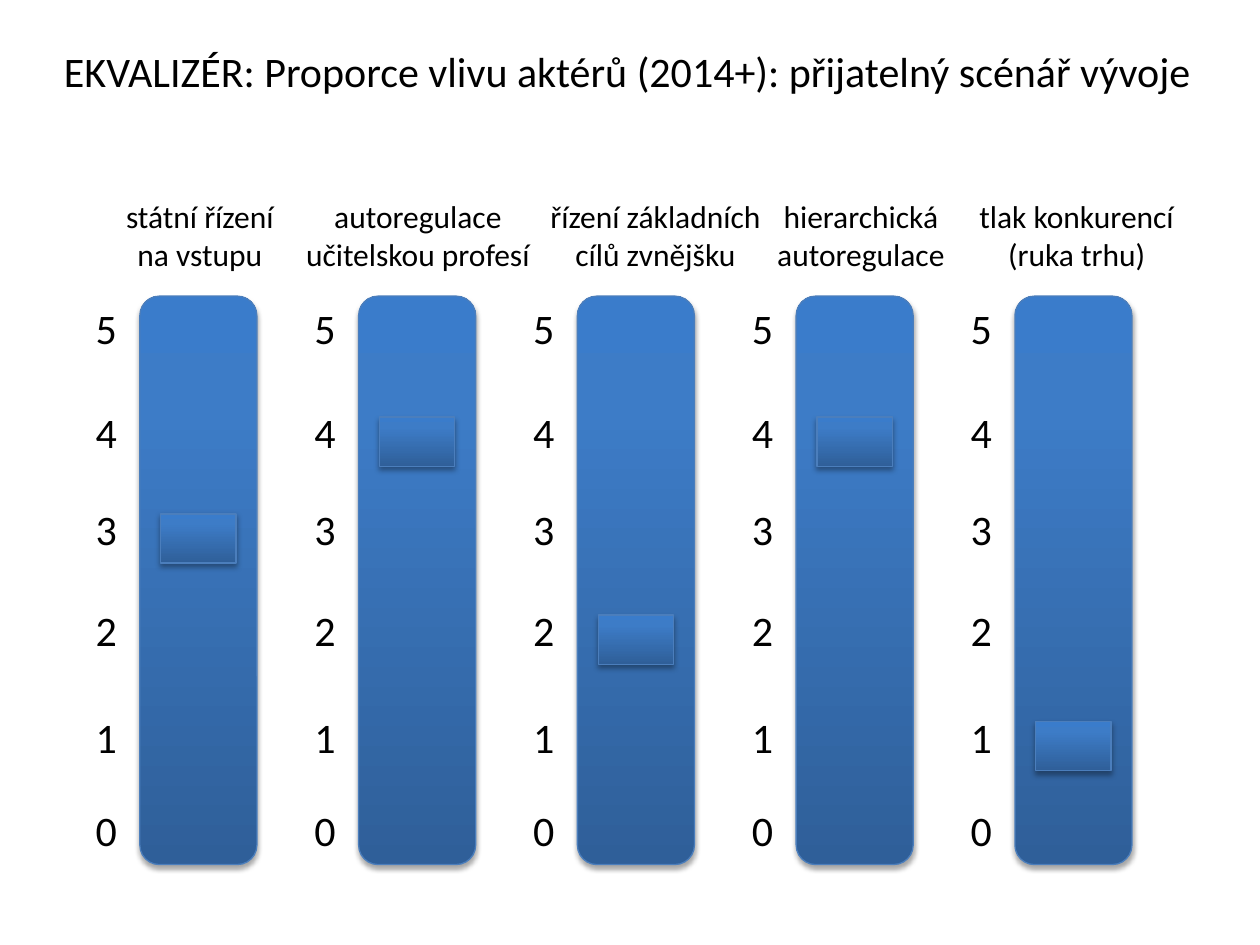
from lxml import etree
from pptx import Presentation
from pptx import util as u
from pptx.dml.color import RGBColor
from pptx.enum import shapes, text
from pptx.oxml.ns import qn

FONT = "Calibri"
BLACK, OUTLINE = "000000", "4B7EBC"
GRADIENT = [(0, "2F5F99"), (80, "3D7CC7"), (100, "3A7CCB")]

# Lengths in centimetres
FIRST_LEFT, COLUMN_STEP = 1.68, 4.41
SCALE_TOPS = {0: 16.1, 1: 14.22, 2: 12.07, 3: 10.03, 4: 8.08, 5: 5.97}
SCALE_WIDTH, SCALE_HEIGHT = 1.14, 1.32
BAR_TOP, BAR_WIDTH, BAR_HEIGHT = 5.97, 2.36, 11.46
SLIDER_WIDTH, SLIDER_HEIGHT, SLIDER_DROP = 1.52, 0.99, 0.33
HEADING_TOP, HEADING_HEIGHT = 3.85, 1.8

# Heading, its left and width, slider level
CHANNELS = [
    ("státní řízení\nna vstupu", 1.68, 4.7, 3),
    ("autoregulace učitelskou profesí", 5.82, 5.21, 4),
    ("řízení základních cílů zvnějšku", 10.74, 4.95, 2),
    ("hierarchická autoregulace", 14.88, 4.95, 4),
    ("tlak konkurencí\n(ruka trhu)", 19.33, 4.75, 1),
]


def color(value):
    return RGBColor.from_string(value)


def lengths(*values):
    return [u.Cm(value) for value in values]


def format_text(shape, content, size, alignment):
    frame = shape.text_frame
    frame.text = content
    frame.word_wrap = True
    frame.auto_size = text.MSO_AUTO_SIZE.SHAPE_TO_FIT_TEXT
    frame.vertical_anchor = text.MSO_ANCHOR.TOP
    for paragraph in frame.paragraphs:
        paragraph.alignment = alignment
        for run in paragraph.runs:
            run.font.name = FONT
            run.font.size = u.Pt(size)
            run.font.color.rgb = color(BLACK)


def add_label(parent, content, box, size, alignment):
    label = parent.add_textbox(*lengths(*box))
    format_text(label, content, size, alignment)


def add_glossy_shape(parent, kind, box):
    shape = parent.add_shape(kind, *lengths(*box))
    shape.line.color.rgb = color(OUTLINE)
    shape.line.width = u.Pt(0.75)

    # Three-stop gradient running upwards
    shape.fill.gradient()
    shape.fill.gradient_angle = 90
    stops = shape.element.spPr.find(qn("a:gradFill")).find(qn("a:gsLst"))
    for stop in list(stops):
        stops.remove(stop)
    for position, value in GRADIENT:
        stop = etree.SubElement(stops, qn("a:gs"), pos=str(position * 1000))
        etree.SubElement(stop, qn("a:srgbClr"), val=value)

    # Soft shadow below
    shape.shadow.inherit = False
    effects = shape.element.spPr.find(qn("a:effectLst"))
    shadow = etree.SubElement(
        effects, qn("a:outerShdw"), blurRad=str(u.Pt(3.1)),
        dist=str(u.Pt(1.8)), dir="5400000", rotWithShape="0")
    shade = etree.SubElement(shadow, qn("a:srgbClr"), val=BLACK)
    etree.SubElement(shade, qn("a:alpha"), val="35000")


def add_channel(slide, left, level):
    group = slide.shapes.add_group_shape().shapes
    bar_left = left + SCALE_WIDTH
    add_glossy_shape(group, shapes.MSO_SHAPE.FLOWCHART_ALTERNATE_PROCESS,
                     (bar_left, BAR_TOP, BAR_WIDTH, BAR_HEIGHT))
    for number, top in SCALE_TOPS.items():
        add_label(group, str(number), (left, top, SCALE_WIDTH, SCALE_HEIGHT),
                  24, text.PP_ALIGN.LEFT)
    slider_left = bar_left + (BAR_WIDTH - SLIDER_WIDTH) / 2
    add_glossy_shape(group, shapes.MSO_SHAPE.ACTION_BUTTON_CUSTOM,
                     (slider_left, SCALE_TOPS[level] + SLIDER_DROP,
                      SLIDER_WIDTH, SLIDER_HEIGHT))


def set_title(slide, content):
    title = slide.shapes.title
    title.left, title.top, title.width, title.height = lengths(0.61, 0.79, 24.08, 1.27)
    format_text(title, content, 24, text.PP_ALIGN.CENTER)


def main():
    presentation = Presentation()
    presentation.slide_width, presentation.slide_height = lengths(25.4, 19.05)
    slide = presentation.slides.add_slide(presentation.slide_layouts[5])
    set_title(slide, "EKVALIZÉR: Proporce vlivu aktérů (2014+): přijatelný scénář vývoje")

    # Equalizer channels with their headings
    for index, (heading, left, width, level) in enumerate(CHANNELS):
        add_channel(slide, FIRST_LEFT + index * COLUMN_STEP, level)
        add_label(slide.shapes, heading, (left, HEADING_TOP, width, HEADING_HEIGHT),
                  18, text.PP_ALIGN.CENTER)

    presentation.save("out.pptx")


if __name__ == "__main__":
    main()
